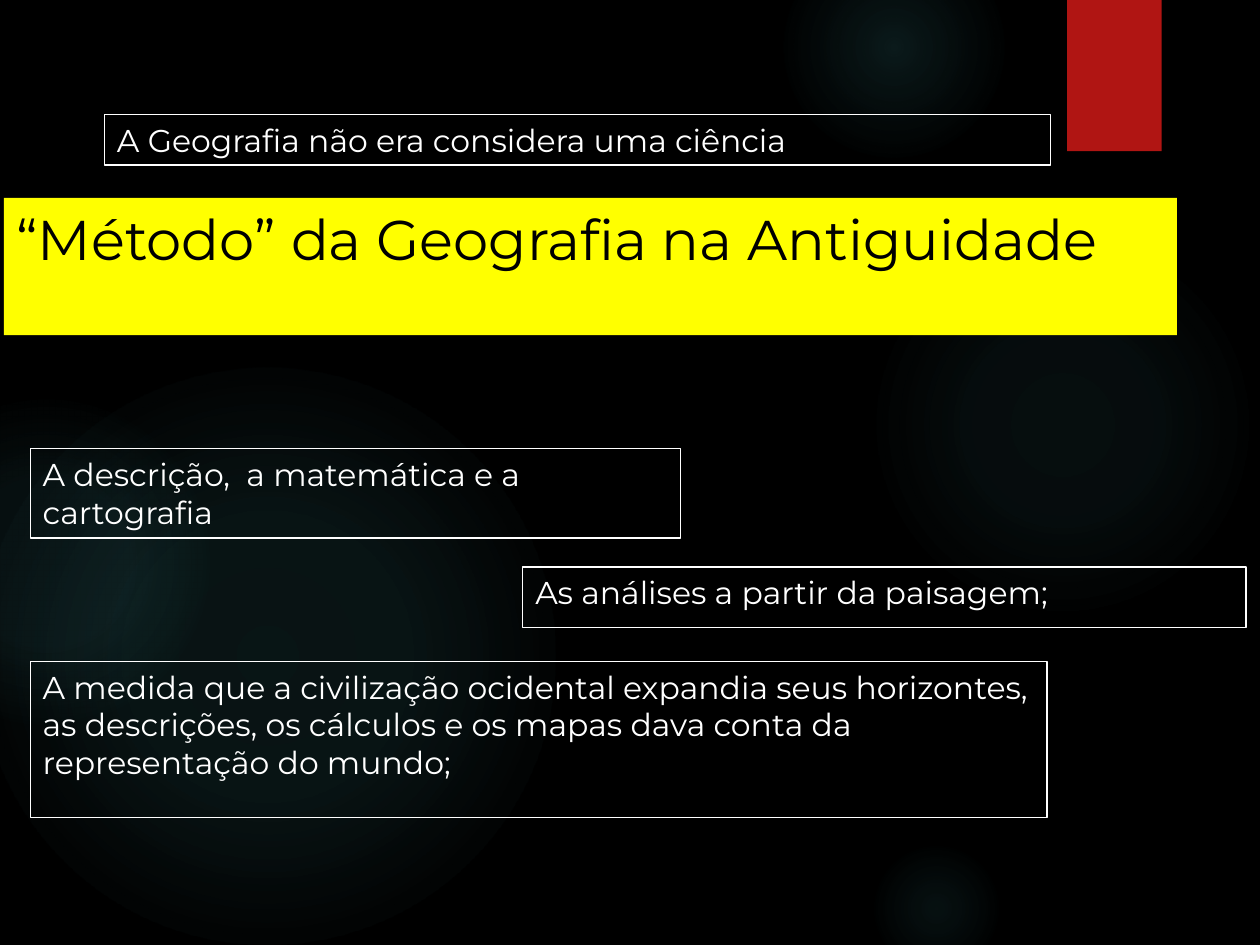
from dataclasses import dataclass
from lxml.etree import SubElement
from pptx import Presentation
from pptx.dml.color import RGBColor
from pptx.enum.shapes import MSO_SHAPE
from pptx.enum.text import MSO_ANCHOR, MSO_AUTO_SIZE, PP_ALIGN
from pptx.oxml.ns import qn
from pptx.slide import Slide
from pptx.util import Inches, Pt

BLACK = RGBColor(0x00, 0x00, 0x00)
WHITE = RGBColor(0xFF, 0xFF, 0xFF)
YELLOW = RGBColor(0xFF, 0xFF, 0x00)
RED = RGBColor(0xB0, 0x15, 0x13)
TEAL = RGBColor(0x50, 0xB9, 0xC1)
COLS, ROWS, CELL = 100, 75, Inches(0.1)


def grid(*cells):
    """Turn grid cells into slide lengths."""
    return [round(n * CELL) for n in cells]


@dataclass
class Deck:
    """Style and current slide; lengths are cells of a 100 by 75 grid."""
    slide: Slide
    font: str = "Montserrat"

    def shape(self, kind, *box):
        """Add a plain shape without line or shadow."""
        item = self.slide.shapes.add_shape(kind, *grid(*box))
        item.shadow.inherit = False
        item.line.fill.background()
        return item

    def glow(self, left, top, size, stops):
        """Add a round glow that fades out from its centre."""
        disc = self.shape(MSO_SHAPE.OVAL, left, top, size, size)
        disc.fill.gradient()
        fill = disc._element.spPr.find(qn("a:gradFill"))
        for part in list(fill):
            fill.remove(part)
        steps = SubElement(fill, qn("a:gsLst"))
        for place, alpha in stops:
            step = SubElement(steps, qn("a:gs"), pos=str(place * 1000))
            tint = SubElement(step, qn("a:srgbClr"), val=str(TEAL))
            SubElement(tint, qn("a:alpha"), val=str(alpha * 1000))
        ring = SubElement(fill, qn("a:path"), {"path": "circle"})
        SubElement(ring, qn("a:fillToRect"),
                   {side: "50000" for side in "ltrb"})

    def tab(self, *box):
        """Add the red tab at the top edge."""
        flag = self.shape(MSO_SHAPE.RECTANGLE, *box)
        flag.fill.solid()
        flag.fill.fore_color.rgb = RED

    def label(self, item, text, size, color):
        """Put styled text at the top left of an item."""
        frame = item.text_frame
        frame.text = text
        frame.word_wrap = True
        frame.auto_size = MSO_AUTO_SIZE.NONE
        frame.vertical_anchor = MSO_ANCHOR.TOP
        line = frame.paragraphs[0]
        line.alignment = PP_ALIGN.LEFT
        font = line.runs[0].font
        font.name, font.size, font.color.rgb = self.font, Pt(size), color

    def title(self, text, *box):
        """Place the title on its yellow band, in front of the glows."""
        head = self.slide.shapes.title
        head.left, head.top, head.width, head.height = grid(*box)
        head.fill.solid()
        head.fill.fore_color.rgb = YELLOW
        self.label(head, text, 32, BLACK)
        self.slide.shapes._spTree.append(head._element)

    def note(self, text, *box):
        """Add a white-framed text box."""
        item = self.slide.shapes.add_textbox(*grid(*box))
        item.line.color.rgb = WHITE
        item.line.width = Pt(0.75)
        self.label(item, text, 18, WHITE)


def main():
    """Build and save the slide."""
    show = Presentation()
    show.slide_width, show.slide_height = grid(COLS, ROWS)
    deck = Deck(show.slides.add_slide(show.slide_layouts[5]))
    back = deck.slide.background.fill
    back.solid()
    back.fore_color.rgb = BLACK

    for left, top, size, core, mid, edge in (
        (68.9, 18.3, 30.8, 7, 6, 69),
        (62.2, -5, 17.5, 14, 7, 73),
        (68.9, 66.7, 10.8, 9, 5, 66),
        (-1.7, 29.2, 45.8, 11, 10, 75),
        (-9.2, 31.7, 25.8, 8, 8, 72),
    ):
        deck.glow(left, top, size, ((0, core), (36, mid), (edge, 0)))
    deck.tab(84.7, 0, 7.5, 12)

    deck.title("“Método” da Geografia na Antiguidade", 0.3, 15.7, 93.1, 10.9)
    deck.note("As análises a partir da paisagem;", 41.5, 45, 57.4, 4.8)
    deck.note("A Geografia não era considera uma ciência", 8.3, 9.1, 75.1, 4)
    deck.note("A descrição,  a matemática e a cartografia",
              2.4, 35.6, 51.6, 7.1)
    deck.note("A medida que a civilização ocidental expandia seus horizontes, "
              "as descrições, os cálculos e os mapas dava conta da "
              "representação do mundo;", 2.4, 52.5, 80.7, 12.4)
    show.save("out.pptx")


if __name__ == "__main__":
    main()
